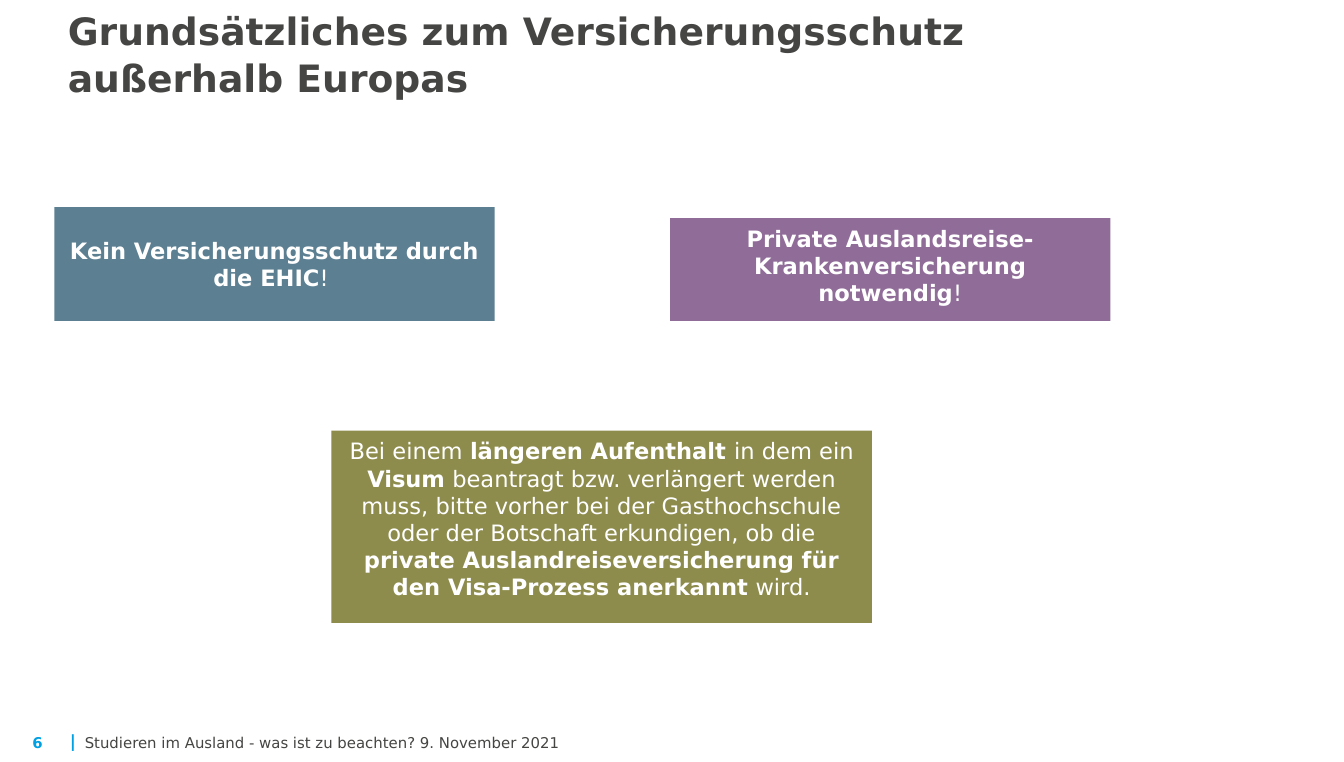
"""Builds the slide on insurance cover outside Europe."""
import pptx
import pptx.dml.color
import pptx.enum.shapes
import pptx.enum.text
import pptx.oxml
import pptx.oxml.ns
import pptx.util

RGBColor = pptx.dml.color.RGBColor
Align = pptx.enum.text.PP_ALIGN
Anchor = pptx.enum.text.MSO_ANCHOR

WIDTH, HEIGHT = pptx.util.Cm(25.2), pptx.util.Pt(405)
FONT = "DejaVu Sans"
GREY = RGBColor(0x45, 0x45, 0x43)
CYAN = RGBColor(0x00, 0xA0, 0xE3)
WHITE = RGBColor(0xFF, 0xFF, 0xFF)
OLIVE = RGBColor(0x5E, 0x5C, 0x00)
NAVY = RGBColor(0x00, 0x39, 0x55)
PURPLE = RGBColor(0x62, 0x2F, 0x6D)

MARGIN = 4.05
CARD_WIDTH = 32.76
CARD_BOTTOM = 42.13
FOOTER_TOP, FOOTER_HEIGHT = 95.91, 2.67

TITLE = [("Grundsätzliches zum Versicherungsschutz außerhalb Europas", True)]
TITLE_AREA = (MARGIN, 0, 80.14, 14.22)

FOOTER = [
    ("6", 2.42, 2.42, 7.9, CYAN, True, False),
    ("|", 5.2, 0.6, 8.9, CYAN, True, False),
    ("Studieren im Ausland - was ist zu beachten? 9. November 2021",
     6.31, 91.33, 7.9, GREY, False, True),
]

VISA = [
    ("Bei einem ", False),
    ("längeren Aufenthalt ", True),
    ("in dem ein ", False),
    ("Visum", True),
    (" beantragt bzw. verlängert werden muss, bitte vorher bei der "
     "Gasthochschule oder der Botschaft erkundigen, ob die ", False),
    ("private Auslandreiseversicherung für den Visa-Prozess anerkannt", True),
    (" wird.", False),
]
EHIC = [("Kein Versicherungsschutz durch die EHIC", True), ("! ", False)]
PRIVATE = [("Private Auslandsreise-Krankenversicherung notwendig", True), ("!", False)]

CARDS = [
    (VISA, (24.66, 56.53, 40.22, 25.24), OLIVE, 70, Anchor.TOP),
    (EHIC, (MARGIN, 27.2, CARD_WIDTH, CARD_BOTTOM - 27.2), NAVY, 64, Anchor.MIDDLE),
    (PRIVATE, (49.86, 28.62, CARD_WIDTH, CARD_BOTTOM - 28.62), PURPLE, 70, Anchor.TOP),
]


def place(area):
    """Turn percentages of the slide into lengths."""
    return [pptx.util.Emu(round(share * side / 100))
            for share, side in zip(area, (WIDTH, HEIGHT) * 2)]


def write(shape, spans, size, color, anchor, align=Align.LEFT, wrap=True):
    """Fill a shape with one paragraph of runs and return the paragraph."""
    frame = shape.text_frame
    frame.word_wrap = wrap
    frame.vertical_anchor = anchor
    para = frame.paragraphs[0]
    para.alignment = align
    for text, bold in spans:
        span = para.add_run()
        span.text = text
        span.font.name = FONT
        span.font.size = pptx.util.Pt(size)
        span.font.bold = bold
        span.font.color.rgb = color
    return para


def add_card(page, spans, area, color, opacity, anchor):
    """Add a translucent rectangle with centred white text."""
    card = page.shapes.add_shape(
        pptx.enum.shapes.MSO_SHAPE.RECTANGLE, *place(area))
    card.shadow.inherit = False
    card.line.fill.background()
    card.fill.solid()
    card.fill.fore_color.rgb = color
    fill = card.element.spPr.find(pptx.oxml.ns.qn("a:solidFill"))
    alpha = pptx.oxml.parse_xml(
        f'<a:alpha {pptx.oxml.ns.nsdecls("a")} val="{opacity * 1000}"/>')
    fill[0].append(alpha)
    write(card, spans, 12, WHITE, anchor, Align.CENTER)


def add_footer(page, text, left, width, size, color, bold, wrap):
    """Add one piece of the footer line."""
    box = page.shapes.add_textbox(*place((left, FOOTER_TOP, width, FOOTER_HEIGHT)))
    frame = box.text_frame
    frame.margin_left = frame.margin_right = 0
    frame.margin_top = frame.margin_bottom = 0
    write(box, [(text, bold)], size, color, Anchor.BOTTOM, wrap=wrap)


def main():
    """Build and save the deck."""
    deck = pptx.Presentation()
    deck.slide_width = WIDTH
    deck.slide_height = HEIGHT
    page = deck.slides.add_slide(deck.slide_layouts[6])
    for part in FOOTER:
        add_footer(page, *part)
    for card in CARDS:
        add_card(page, *card)
    title = page.shapes.add_textbox(*place(TITLE_AREA))
    para = write(title, TITLE, 20, GREY, Anchor.TOP)
    para.line_spacing = pptx.util.Pt(24.8)
    deck.save("out.pptx")


if __name__ == "__main__":
    main()
